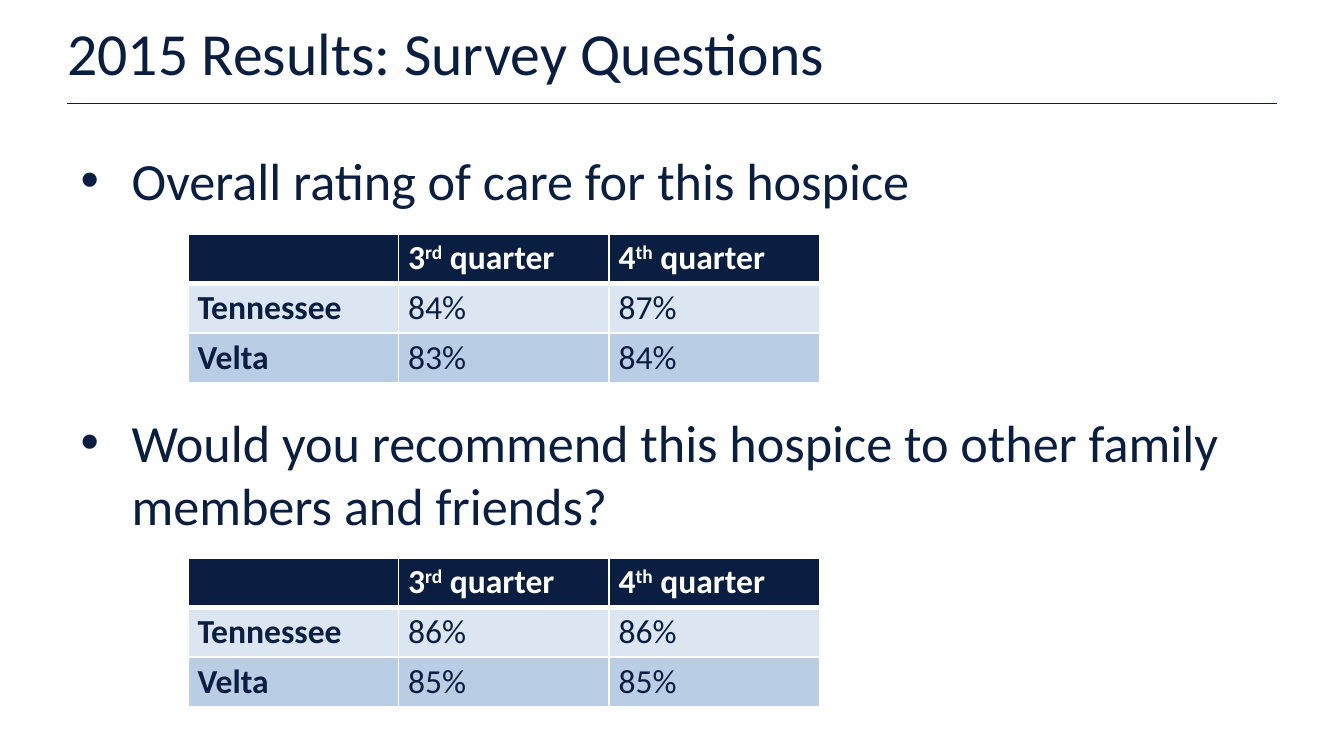
from lxml.etree import SubElement
from pptx import Presentation
from pptx.dml.color import RGBColor
from pptx.enum.shapes import MSO_CONNECTOR
from pptx.enum.text import MSO_ANCHOR, MSO_AUTO_SIZE, PP_ALIGN
from pptx.oxml.ns import qn
from pptx.util import Inches, Pt

NAVY = RGBColor(0x09, 0x1E, 0x40)
WHITE = RGBColor(0xFF, 0xFF, 0xFF)
PALE_BLUE = RGBColor(0xDC, 0xE6, 0xF2)
MID_BLUE = RGBColor(0xB9, 0xCD, 0xE5)


def write(paragraph, text, size=18, color=NAVY, bold=False, raised=False):
    run = paragraph.add_run()
    run.text = text
    run.font.name = "Calibri"
    run.font.size = Pt(size)
    run.font.color.rgb = color
    run.font.bold = bold
    if raised:
        run.font._element.set("baseline", "30000")


def set_borders(cell, top, bottom):
    """Draw white cell borders; top and bottom are widths in points."""
    properties = cell._tc.get_or_add_tcPr()
    for side, width in (("L", 1), ("R", 1), ("T", top), ("B", bottom)):
        border = SubElement(properties, qn(f"a:ln{side}"), w=str(Pt(width)))
        fill = SubElement(border, qn("a:solidFill"))
        SubElement(fill, qn("a:srgbClr"), val=str(WHITE))


prs = Presentation()
prs.slide_width = Inches(10)
prs.slide_height = Inches(10 * 9 / 16)
slide = prs.slides.add_slide(prs.slide_layouts[1])

# Heading and its rule
title = slide.shapes.title
title.left, title.top = Inches(0), Inches(0)
title.width, title.height = Inches(10), Inches(0.77)
heading = title.text_frame
heading.auto_size = MSO_AUTO_SIZE.NONE
heading.vertical_anchor = MSO_ANCHOR.MIDDLE
heading.margin_left = heading.margin_right = Inches(0.5)
heading.margin_top = heading.margin_bottom = Inches(0.1)
heading.paragraphs[0].alignment = PP_ALIGN.LEFT
write(heading.paragraphs[0], "2015 Results: Survey Questions", size=32)

rule = slide.shapes.add_connector(
    MSO_CONNECTOR.STRAIGHT, Inches(0.5), Inches(0.77), Inches(9.5), Inches(0.77))
rule.line.color.rgb = NAVY
rule.line.width = Pt(1)
SubElement(rule._element.spPr, qn("a:effectLst"))

# Survey questions, with room for a table after the first
body = slide.placeholders[1]
body.left, body.top = Inches(0.5), Inches(1.05)
body.width, body.height = Inches(9), Inches(3.71)
questions = body.text_frame
questions.auto_size = MSO_AUTO_SIZE.NONE
first_question, second_question = questions.paragraphs[0], questions.add_paragraph()
for question, text, space in (
    (first_question, "Overall rating of care for this hospice", 0),
    (second_question,
     "Would you recommend this hospice to other family members and friends?", 107),
):
    properties = question._p.get_or_add_pPr()
    properties.set("marL", str(Inches(0.38)))
    properties.set("indent", str(Inches(-0.38)))
    SubElement(properties, qn("a:buChar"), char="•")
    question.space_before = Pt(space)
    write(question, text, size=28)

# One results table under each question
results = (
    (1.74, (("Tennessee", "84%", "87%"), ("Velta", "83%", "84%"))),
    (4.15, (("Tennessee", "86%", "86%"), ("Velta", "85%", "85%"))),
)
quarters = ("", ""), ("3", "rd"), ("4", "th")
row_fills = NAVY, PALE_BLUE, MID_BLUE

for top, scores in results:
    table = slide.shapes.add_table(
        3, 3, Inches(1.4), Inches(top), Inches(4.7), Inches(1.11)).table
    for row, fill in enumerate(row_fills):
        for column in range(3):
            cell = table.cell(row, column)
            cell.margin_left = cell.margin_right = Inches(0.07)
            cell.margin_top = cell.margin_bottom = Inches(0.03)
            set_borders(cell, top=3 if row == 1 else 1, bottom=3 if row == 0 else 1)
            cell.fill.solid()
            cell.fill.fore_color.rgb = fill
            paragraph = cell.text_frame.paragraphs[0]
            if row > 0:
                write(paragraph, scores[row - 1][column], bold=column == 0)
            elif column > 0:
                number, ordinal = quarters[column]
                write(paragraph, number, color=WHITE, bold=True)
                write(paragraph, ordinal, color=WHITE, bold=True, raised=True)
                write(paragraph, " quarter", color=WHITE, bold=True)

prs.save("out.pptx")
